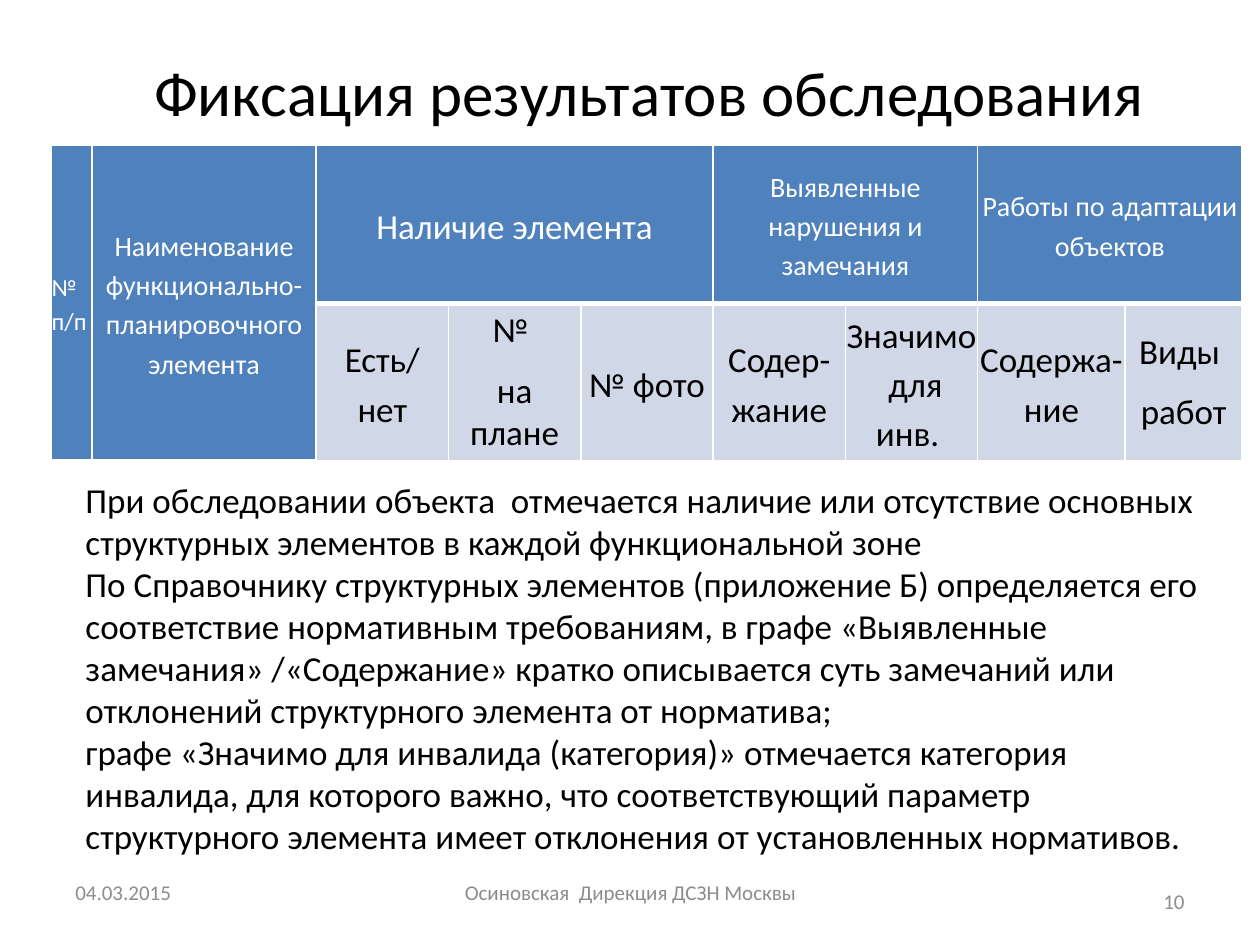
from dataclasses import dataclass

from lxml.etree import SubElement
from pptx import Presentation
from pptx.dml.color import RGBColor
from pptx.enum.text import MSO_ANCHOR as Anchor, PP_ALIGN as Align
from pptx.oxml.ns import qn
from pptx.util import Inches, Pt

SLIDE_WIDTH, SLIDE_HEIGHT = Inches(10), Inches(7.5)
BLACK = RGBColor(0x00, 0x00, 0x00)
WHITE = RGBColor(0xFF, 0xFF, 0xFF)
GREY = RGBColor(0x8C, 0x8C, 0x8C)
BLUE = RGBColor(0x4F, 0x81, 0xBD)
PALE_BLUE = RGBColor(0xD0, 0xD8, 0xE8)
FONT = "Calibri"

COLUMN_SHARES = (3.2, 17.8, 10.5, 10.5, 10.5, 10.5, 10.5, 11.7, 9.3)
ROW_SHARES = (16.8, 15.73)


@dataclass(frozen=True)
class Area:
    """A rectangle in percent of the slide's width and height."""
    left: float
    top: float
    width: float
    height: float

    def box(self) -> tuple:
        """Return left, top, width and height as lengths."""
        return across(self.left), down(self.top), across(self.width), down(self.height)


@dataclass(frozen=True)
class Caption:
    """A block of text on the slide."""
    area: Area
    paragraphs: tuple
    size: float = 12
    color: RGBColor = GREY
    align: Align = Align.LEFT
    anchor: Anchor = Anchor.MIDDLE


@dataclass(frozen=True)
class Heading:
    """A table cell, with the rows and columns it covers."""
    row: int
    column: int
    paragraphs: tuple
    size: float = 20
    rows: int = 1
    columns: int = 1
    align: Align = Align.CENTER
    line_spacing: float = 1.15


CAPTIONS = (
    Caption(Area(5, 4, 93, 11.33), ("Фиксация результатов обследования",),
            36, BLACK, Align.CENTER),
    Caption(Area(5, 91.07, 23.3, 6.67), ("04.03.2015",)),
    Caption(Area(34.2, 91.07, 31.7, 6.67), ("Осиновская  Дирекция ДСЗН Москвы",),
            align=Align.CENTER),
    Caption(Area(5.8, 50, 90.8, 41.73), (
        "При обследовании объекта  отмечается наличие или отсутствие основных "
        "структурных элементов в каждой функциональной зоне",
        "По Справочнику структурных элементов (приложение Б) определяется его "
        "соответствие нормативным требованиям, в графе «Выявленные замечания» "
        "/«Содержание» кратко описывается суть замечаний или отклонений "
        "структурного элемента от норматива;",
        "графе «Значимо для инвалида (категория)» отмечается категория инвалида, "
        "для которого важно, что соответствующий параметр структурного элемента "
        "имеет отклонения от установленных нормативов.",
    ), 20, BLACK, anchor=Anchor.TOP),
    Caption(Area(71.7, 92.67, 23.3, 5.33), ("10",), align=Align.RIGHT),
)

HEADINGS = (
    Heading(0, 0, ("№ п/п",), 14, rows=2, align=Align.LEFT),
    Heading(0, 1, ("Наименование функционально-планировочного элемента",), 16, rows=2),
    Heading(0, 2, ("Наличие элемента",), columns=3),
    Heading(0, 5, ("Выявленные нарушения и замечания",), 16, columns=2),
    Heading(0, 7, ("Работы по адаптации объектов",), 16, columns=2),
    Heading(1, 2, ("Есть/ нет",)),
    Heading(1, 3, ("№ ", "на плане"), line_spacing=1.0),
    Heading(1, 4, ("№ фото",)),
    Heading(1, 5, ("Содер-жание",)),
    Heading(1, 6, ("Значимо  для инв. ",)),
    Heading(1, 7, ("Содержа-ние",)),
    Heading(1, 8, ("Виды ", "работ"), line_spacing=1.0),
)


def across(share: float) -> int:
    """Convert a percentage of the slide's width to a length."""
    return round(SLIDE_WIDTH * share / 100)


def down(share: float) -> int:
    """Convert a percentage of the slide's height to a length."""
    return round(SLIDE_HEIGHT * share / 100)


def write(frame, paragraphs: tuple, size: float, color: RGBColor, align: Align) -> None:
    """Fill a text frame with one run per paragraph."""
    frame.word_wrap = True
    for index, wording in enumerate(paragraphs):
        paragraph = frame.add_paragraph() if index else frame.paragraphs[0]
        paragraph.alignment = align
        run = paragraph.add_run()
        run.text = wording
        run.font.name = FONT
        run.font.size = Pt(size)
        run.font.bold = False
        run.font.color.rgb = color


def add_caption(slide, caption: Caption) -> None:
    """Place a block of text on the slide."""
    frame = slide.shapes.add_textbox(*caption.area.box()).text_frame
    frame.vertical_anchor = caption.anchor
    write(frame, caption.paragraphs, caption.size, caption.color, caption.align)


def paint_cell(cell, is_header: bool) -> None:
    """Give a cell its white borders and its fill."""
    properties = cell._tc.get_or_add_tcPr()
    for side in ("L", "R", "T", "B"):
        width = 3 if is_header and side == "B" else 1
        border = SubElement(properties, qn(f"a:ln{side}"), w=str(Pt(width)))
        SubElement(SubElement(border, qn("a:solidFill")), qn("a:srgbClr"), val=str(WHITE))
    cell.fill.solid()
    cell.fill.fore_color.rgb = BLUE if is_header else PALE_BLUE


def add_heading(table, heading: Heading) -> None:
    """Merge the cells of a heading and write its text."""
    cell = table.cell(heading.row, heading.column)
    if heading.rows * heading.columns > 1:
        cell.merge(table.cell(heading.row + heading.rows - 1,
                              heading.column + heading.columns - 1))
    cell.margin_left = cell.margin_right = cell.margin_top = cell.margin_bottom = 0
    cell.vertical_anchor = Anchor.MIDDLE
    color = BLACK if heading.row else WHITE
    write(cell.text_frame, heading.paragraphs, heading.size, color, heading.align)
    for paragraph in cell.text_frame.paragraphs:
        paragraph.line_spacing = heading.line_spacing
        paragraph.space_after = Pt(10)


def add_survey_table(slide) -> None:
    """Draw the header of the survey form."""
    area = Area(4.1, 15.33, sum(COLUMN_SHARES), sum(ROW_SHARES))
    table = slide.shapes.add_table(len(ROW_SHARES), len(COLUMN_SHARES), *area.box()).table
    for column, share in zip(table.columns, COLUMN_SHARES):
        column.width = across(share)
    for row, share in zip(table.rows, ROW_SHARES):
        row.height = down(share)
    for row in range(len(ROW_SHARES)):
        for column in range(len(COLUMN_SHARES)):
            paint_cell(table.cell(row, column), row == 0 or column < 2)
    for heading in HEADINGS:
        add_heading(table, heading)


def main() -> None:
    """Build the slide and save it."""
    deck = Presentation()
    deck.slide_width, deck.slide_height = SLIDE_WIDTH, SLIDE_HEIGHT
    slide = deck.slides.add_slide(deck.slide_layouts[6])
    add_survey_table(slide)
    for caption in CAPTIONS:
        add_caption(slide, caption)
    deck.save("out.pptx")


if __name__ == "__main__":
    main()
